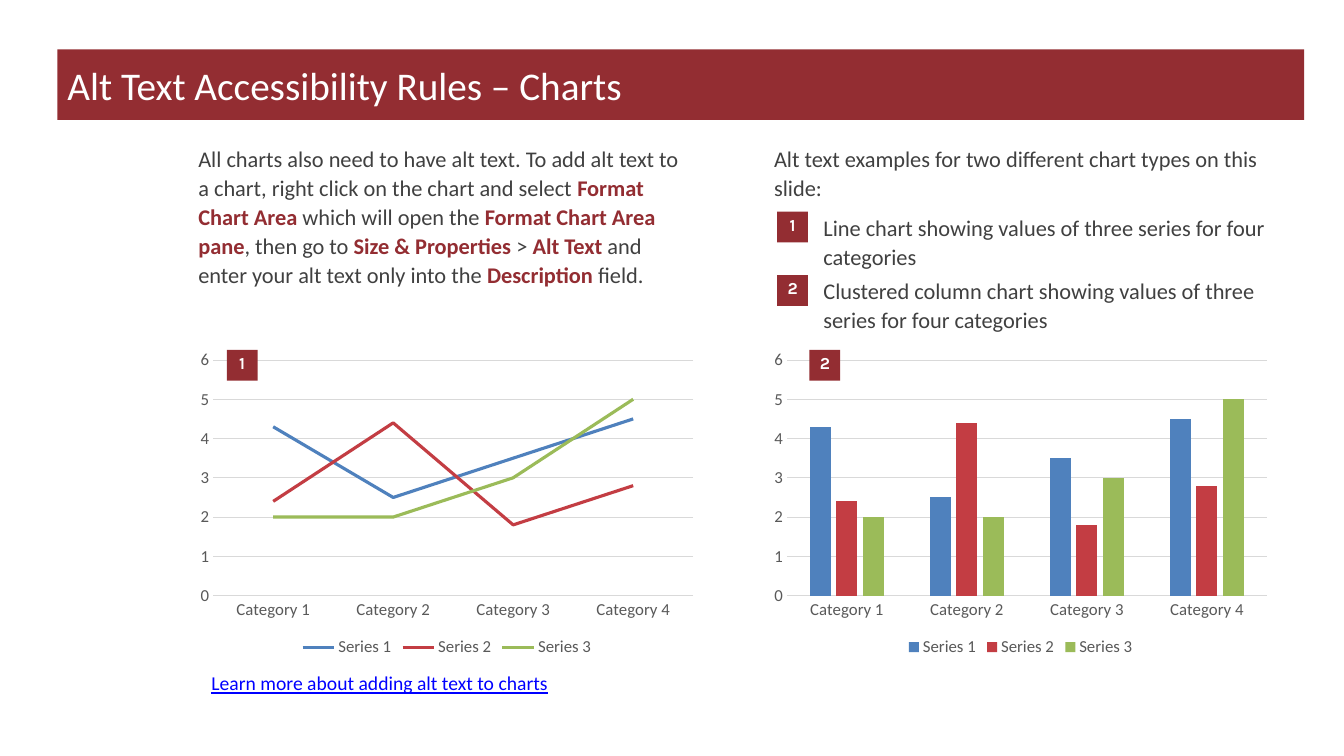
from pptx import Presentation
from pptx.chart.data import CategoryChartData
from pptx.dml.color import RGBColor
from pptx.enum.chart import XL_CHART_TYPE as ChartType, XL_LEGEND_POSITION as LegendPosition
from pptx.enum.chart import XL_TICK_MARK as TickMark
from pptx.enum.shapes import MSO_SHAPE as Shape
from pptx.enum.text import MSO_ANCHOR as Anchor, MSO_AUTO_SIZE as AutoSize, PP_ALIGN as Align
from pptx.util import Pt

COLORS = {
    "accent": "932D32", "white": "FFFFFF", "body": "404040", "link": "0000FF",
    "axis": "595959", "grid": "D9D9D9",
    "Series 1": "4F81BD", "Series 2": "C33D43", "Series 3": "9BBB59",
}
CATEGORIES = [f"Category {number}" for number in range(1, 5)]
SERIES = {
    "Series 1": (4.3, 2.5, 3.5, 4.5),
    "Series 2": (2.4, 4.4, 1.8, 2.8),
    "Series 3": (2, 2, 3, 5),
}
INSTRUCTIONS = [
    ("All charts also need to have alt text. To add alt text to a chart, "
     "right click on the chart and select ", False),
    ("Format Chart Area ", True), ("which will open the ", False),
    ("Format Chart Area pane", True), (", then go to ", False),
    ("Size & Properties ", True), ("> ", False), ("Alt Text ", True),
    ("and enter your alt text only into the ", False),
    ("Description", True), (" field.", False),
]
EXAMPLES = [
    "Line chart showing values of three series for four categories",
    "Clustered column chart showing values of three series for four categories",
]


def color(name):
    return RGBColor.from_string(COLORS[name])


def style_font(font, size, name, bold=False, face="Calibri"):
    font.size, font.name, font.bold = Pt(size), face, bold
    font.color.rgb = color(name)


def add_text(shapes, left, top, width, height, spans, size=16, spacing=None):
    """Add a one-paragraph text box; spans are (text, emphasised) pairs."""
    box = shapes.add_textbox(Pt(left), Pt(top), Pt(width), Pt(height))
    box.text_frame.word_wrap = True
    para = box.text_frame.paragraphs[0]
    para.line_spacing = spacing
    for text, emphasised in spans:
        span = para.add_run()
        span.text = text
        style_font(span.font, size, "accent" if emphasised else "body", emphasised)
    return para


def add_title(page, left, top, width, height):
    title = page.shapes.title
    title.left, title.top, title.width, title.height = map(Pt, (left, top, width, height))
    title.fill.solid()
    title.fill.fore_color.rgb = color("accent")
    frame = title.text_frame
    frame.auto_size = AutoSize.NONE
    frame.vertical_anchor = Anchor.MIDDLE
    para = frame.paragraphs[0]
    para.alignment = Align.LEFT
    span = para.add_run()
    span.text = "Alt Text Accessibility Rules – Charts"
    style_font(span.font, 28, "white")


def add_badge(page, left, top, number):
    """Add a numbered square whose label box is wider than the square."""
    group = page.shapes.add_group_shape()
    square = group.shapes.add_shape(Shape.RECTANGLE, Pt(left), Pt(top), Pt(22), Pt(22))
    square.shadow.inherit = False
    square.fill.solid()
    square.fill.fore_color.rgb = color("accent")
    square.line.fill.background()
    para = add_text(group.shapes, left - 4, top - 1.5, 30, 21.8, [(str(number), True)])
    para.alignment = Align.CENTER
    style_font(para.runs[0].font, 12, "white", True, "Karla")


def add_examples(page, left, top, width):
    intro = "Alt text examples for two different chart types on this slide:"
    add_text(page.shapes, left, top, width, 48, [(intro, False)], spacing=1.08)
    for index, example in enumerate(EXAMPLES):
        row_top = top + 49 + 45.3 * index
        add_badge(page, left + 9.4, row_top + 3.6, index + 1)
        add_text(page.shapes, left + 35.3, row_top, width - 38.8, 49,
                 [(example, False)], spacing=1.08)


def style_axes(chart):
    for axis in (chart.category_axis, chart.value_axis):
        axis.major_tick_mark = axis.minor_tick_mark = TickMark.NONE
        style_font(axis.tick_labels.font, 12, "axis")
    category_line = chart.category_axis.format.line
    grid_line = chart.value_axis.major_gridlines.format.line
    for line in (category_line, grid_line):
        line.width = Pt(0.75)
        line.color.rgb = color("grid")
    chart.value_axis.format.line.fill.background()
    chart.value_axis.minimum_scale, chart.value_axis.maximum_scale = 0, 6
    chart.value_axis.major_unit = 1


def add_series_chart(page, left, top, kind, badge_left, number):
    data = CategoryChartData()
    data.categories = CATEGORIES
    for name, values in SERIES.items():
        data.add_series(name, values)
    chart = page.shapes.add_chart(kind, Pt(left), Pt(top), Pt(366.5), Pt(226.8), data).chart
    chart.has_title = False
    chart.font.size, chart.font.name = Pt(10), "Calibri"
    chart.has_legend = True
    chart.legend.position = LegendPosition.BOTTOM
    chart.legend.include_in_layout = False
    style_font(chart.legend.font, 12, "axis")
    style_axes(chart)
    plot = chart.plots[0]
    plot.vary_by_categories = False
    if kind == ChartType.COLUMN_CLUSTERED:
        plot.gap_width, plot.overlap = 219, -27
    for series in plot.series:
        if kind == ChartType.LINE:
            series.smooth = False
            series.format.line.width = Pt(2.25)
            series.format.line.color.rgb = color(series.name)
        else:
            series.format.fill.solid()
            series.format.fill.fore_color.rgb = color(series.name)
    add_badge(page, badge_left, top + 4.5, number)


def add_learn_more(page, left, top):
    para = add_text(page.shapes, left, top, 285, 24.5,
                    [("Learn more about adding alt text to charts", False)], 14)
    font = para.runs[0].font
    font.underline = True
    font.color.rgb = color("link")


def main():
    deck = Presentation()
    deck.slide_width, deck.slide_height = Pt(960), Pt(540)
    page = deck.slides.add_slide(deck.slide_layouts[5])
    add_title(page, 41, 35.3, 890.6, 50.4)
    add_text(page.shapes, 134.6, 98.6, 368.6, 150.5, INSTRUCTIONS, spacing=1.08)
    add_examples(page, 545.8, 98.6, 375)
    add_series_chart(page, 136, 245.5, ChartType.LINE, 162, 1)
    add_series_chart(page, 545.8, 245.5, ChartType.COLUMN_CLUSTERED, 578.2, 2)
    add_learn_more(page, 144, 476)
    deck.save("out.pptx")


if __name__ == "__main__":
    main()
